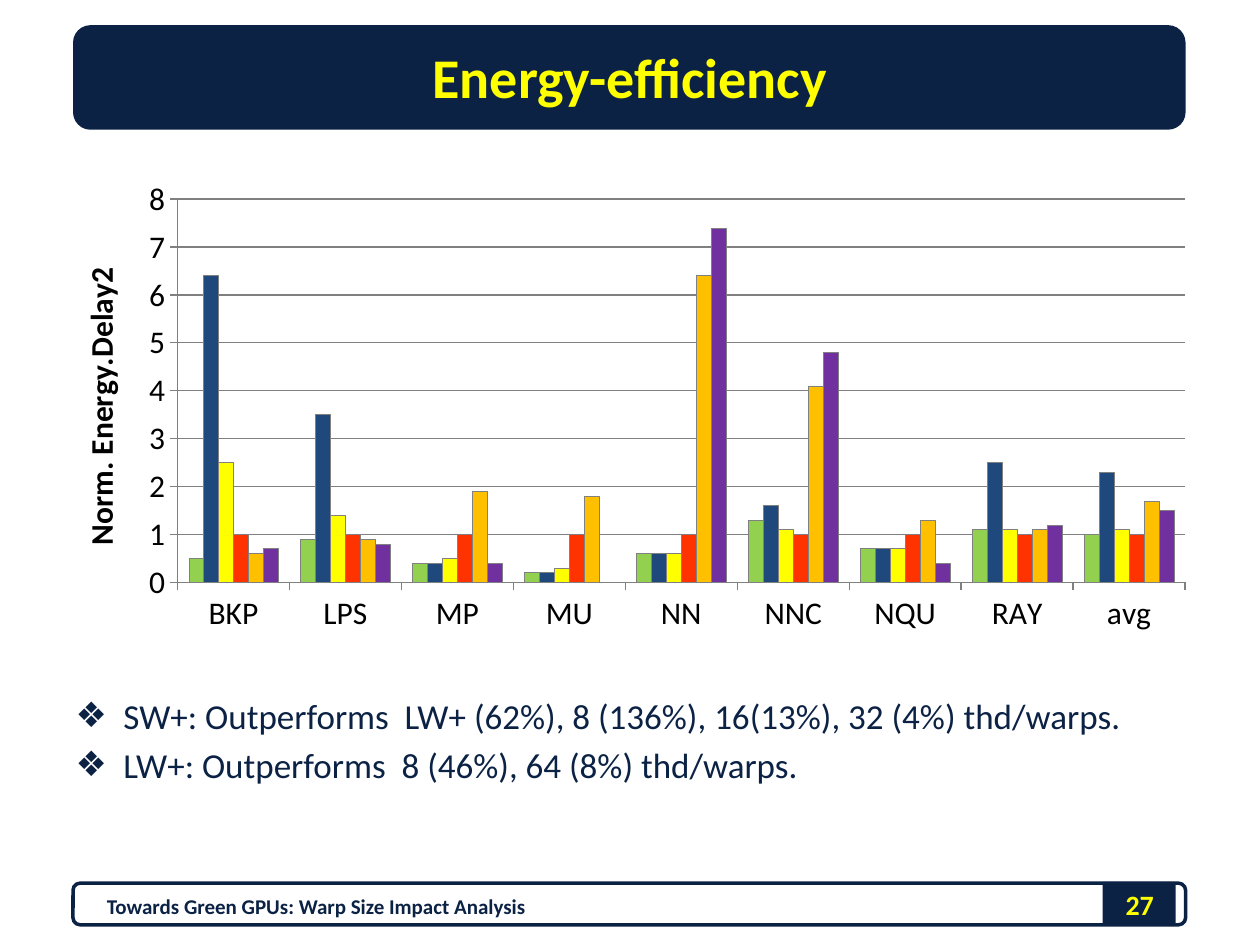
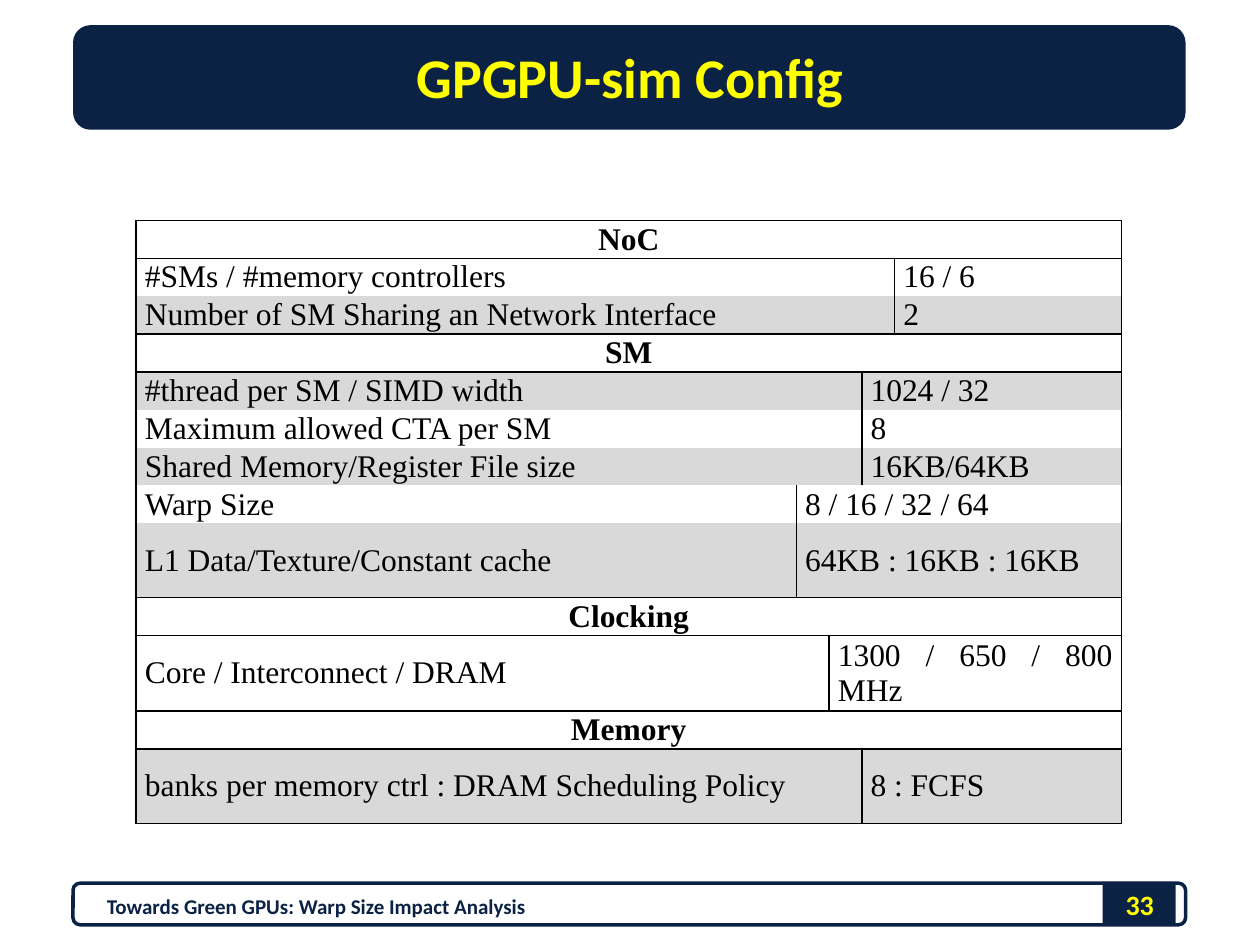
from typing import NamedTuple

from lxml.etree import SubElement
from pptx import Presentation
from pptx.chart.data import CategoryChartData
from pptx.dml.color import RGBColor
from pptx.enum.chart import XL_CHART_TYPE, XL_TICK_MARK
from pptx.enum.shapes import MSO_SHAPE
from pptx.enum.text import MSO_ANCHOR, MSO_AUTO_SIZE, PP_ALIGN
from pptx.oxml.ns import qn
from pptx.util import Inches, Pt

COLORS = {
    "navy": "0B2245", "yellow": "FFFF00", "black": "000000", "white": "FFFFFF",
    "shade": "D9D9D9", "grid": "808080", "green": "92D050", "blue": "1F497D",
    "red": "FF3300", "amber": "FFC000", "purple": "7030A0",
}
FOOTER = "Towards Green GPUs: Warp Size Impact Analysis"


class Band(NamedTuple):
    kind: MSO_SHAPE
    left: float
    top: float
    width: float
    height: float
    filled: bool


class WarpSeries(NamedTuple):
    name: str
    color: str
    values: tuple[float, ...]


class ConfigRow(NamedTuple):
    label: str
    value: str = ""
    label_span: int = 5
    shaded: bool = False
    height: float = 0.3

    @property
    def is_header(self) -> bool:
        return not self.value


BANDS = [
    Band(MSO_SHAPE.RECTANGLE, 8.75, 7, 0.58, 0.33, True),
    Band(MSO_SHAPE.ROUNDED_RECTANGLE, 0.58, 7.01, 8.83, 0.33, False),
    Band(MSO_SHAPE.ROUNDED_RECTANGLE, 0.58, 0.2, 8.83, 0.83, True),
]

BENCHMARKS = ("BKP", "LPS", "MP", "MU", "NN", "NNC", "NQU", "RAY", "avg")
WARP_SERIES = [
    WarpSeries("SW+", "green", (0.5, 0.9, 0.4, 0.2, 0.6, 1.3, 0.7, 1.1, 1)),
    WarpSeries("8", "blue", (6.4, 3.5, 0.4, 0.2, 0.6, 1.6, 0.7, 2.5, 2.3)),
    WarpSeries("16", "yellow", (2.5, 1.4, 0.5, 0.3, 0.6, 1.1, 0.7, 1.1, 1.1)),
    WarpSeries("32", "red", (1,) * 9),
    WarpSeries("64", "amber", (0.6, 0.9, 1.9, 1.8, 6.4, 4.1, 1.3, 1.1, 1.7)),
    WarpSeries("LW+", "purple", (0.7, 0.8, 0.4, 0, 7.4, 4.8, 0.4, 1.2, 1.5)),
]
FINDINGS = [
    "SW+: Outperforms  LW+ (62%), 8 (136%), 16(13%), 32 (4%) thd/warps.",
    "LW+: Outperforms  8 (46%), 64 (8%) thd/warps.",
]

CONFIG_COLUMNS = (5.24, 0.26, 0.26, 0.26, 1.8)
CONFIG_ROWS = [
    ConfigRow("NoC"),
    ConfigRow("#SMs / #memory controllers", "16 / 6", 4),
    ConfigRow("Number of SM Sharing an Network Interface", "2", 4, True),
    ConfigRow("SM"),
    ConfigRow("#thread per SM / SIMD width", "1024 / 32", 3, True),
    ConfigRow("Maximum allowed CTA per SM", "8", 3),
    ConfigRow("Shared Memory/Register File size", "16KB/64KB", 3, True),
    ConfigRow("Warp Size", "8 / 16 / 32 / 64", 1),
    ConfigRow("L1 Data/Texture/Constant cache", "64KB : 16KB : 16KB", 1, True, 0.59),
    ConfigRow("Clocking"),
    ConfigRow("Core / Interconnect / DRAM", "1300 / 650 / 800 MHz", 2, False, 0.59),
    ConfigRow("Memory"),
    ConfigRow("banks per memory ctrl : DRAM Scheduling Policy", "8 : FCFS", 3, True, 0.59),
]


def rgb(name: str) -> RGBColor:
    return RGBColor.from_string(COLORS[name])


def style_font(font, size: float, color: str, bold: bool = False, name: str = "Calibri") -> None:
    font.size, font.bold, font.name = Pt(size), bold, name
    font.color.rgb = rgb(color)


def place(shape, left: float, top: float, width: float, height: float) -> None:
    shape.left, shape.top = Inches(left), Inches(top)
    shape.width, shape.height = Inches(width), Inches(height)


# Shared page frame
def add_band(page, band: Band):
    shape = page.shapes.add_shape(band.kind, *map(Inches, band[1:5]))
    shape.shadow.inherit = False
    if band.filled:
        shape.fill.solid()
        shape.fill.fore_color.rgb = rgb("navy")
        shape.line.fill.background()
    else:
        shape.fill.background()
        shape.line.color.rgb = rgb("navy")
        shape.line.width = Pt(2)
    return shape


def add_label(page, text: str, left: float, top: float, width: float,
              size: float, color: str, align: PP_ALIGN) -> None:
    box = page.shapes.add_textbox(*map(Inches, (left, top, width, 0.4)))
    frame = box.text_frame
    frame.word_wrap = True
    frame.vertical_anchor = MSO_ANCHOR.MIDDLE
    frame.text = text
    para = frame.paragraphs[0]
    para.alignment = align
    style_font(para.font, size, color, True)


def add_page(deck, layout: int, title: str, number: str):
    page = deck.slides.add_slide(deck.slide_layouts[layout])
    heading = page.shapes.title
    for band in BANDS:
        heading._element.addprevious(add_band(page, band)._element)
    place(heading, 0.5, 0.17, 9, 0.87)
    frame = heading.text_frame
    frame.text = title
    frame.auto_size = MSO_AUTO_SIZE.NONE
    frame.vertical_anchor = MSO_ANCHOR.MIDDLE
    para = frame.paragraphs[0]
    para.alignment = PP_ALIGN.CENTER
    style_font(para.font, 32, "yellow", True)
    add_label(page, number, 8.67, 6.98, 0.75, 16, "yellow", PP_ALIGN.CENTER)
    add_label(page, FOOTER, 0.75, 6.99, 5.58, 12, "navy", PP_ALIGN.LEFT)
    return page


# Findings list
def fill_findings(body) -> None:
    place(body, 0.5, 5.46, 9, 1.24)
    frame = body.text_frame
    frame.auto_size = MSO_AUTO_SIZE.NONE
    frame.text = "\n".join(FINDINGS)
    for index, para in enumerate(frame.paragraphs):
        properties = para._p.get_or_add_pPr()
        properties.set("marL", str(Inches(0.38)))
        properties.set("indent", str(-Inches(0.38)))
        SubElement(properties, qn("a:buChar")).set("char", "❖")
        para.space_before = Pt(4 if index else 0)
        style_font(para.font, 20, "navy")


# Energy chart
def set_plot_layout(chart, left: float, top: float, width: float, height: float) -> None:
    plot_area = chart._chartSpace.chart.plotArea
    for old in plot_area.findall(qn("c:layout")):
        plot_area.remove(old)
    layout = SubElement(plot_area, qn("c:layout"))
    plot_area.insert(0, layout)
    manual = SubElement(layout, qn("c:manualLayout"))
    settings = {"layoutTarget": "inner", "xMode": "edge", "yMode": "edge",
                "x": left, "y": top, "w": width, "h": height}
    for tag, value in settings.items():
        SubElement(manual, qn(f"c:{tag}")).set("val", str(value))


def add_energy_chart(page) -> None:
    data = CategoryChartData()
    data.categories = BENCHMARKS
    for series in WARP_SERIES:
        data.add_series(series.name, series.values)
    area = map(Inches, (0.58, 1.33, 8.83, 3.91))
    chart = page.shapes.add_chart(XL_CHART_TYPE.COLUMN_CLUSTERED, *area, data).chart
    chart.has_legend = False
    chart.has_title = False
    style_font(chart.font, 18, "black")
    set_plot_layout(chart, 0.094, 0.064, 0.906, 0.778)

    plot = chart.plots[0]
    plot.gap_width, plot.overlap, plot.vary_by_categories = 150, 0, False
    for bars, series in zip(plot.series, WARP_SERIES):
        bars.format.fill.solid()
        bars.format.fill.fore_color.rgb = rgb(series.color)
        bars.format.line.color.rgb = rgb("grid")
        bars.format.line.width = Pt(0.25)

    value_axis = chart.value_axis
    value_axis.minimum_scale, value_axis.maximum_scale, value_axis.major_unit = 0, 8, 1
    value_axis.has_major_gridlines = True
    for line in (value_axis.format.line, chart.category_axis.format.line,
                 value_axis.major_gridlines.format.line):
        line.color.rgb = rgb("grid")
        line.width = Pt(0.75)
    for axis in (value_axis, chart.category_axis):
        axis.major_tick_mark = XL_TICK_MARK.OUTSIDE
    title = value_axis.axis_title.text_frame
    title.text = "Norm. Energy.Delay2"
    style_font(title.paragraphs[0].font, 18, "black", True)


# Configuration table
def set_borders(cell, top: bool, bottom: bool) -> None:
    properties = cell._tc.get_or_add_tcPr()
    for side, visible in (("L", True), ("R", True), ("T", top), ("B", bottom)):
        line = SubElement(properties, qn(f"a:ln{side}"), w=str(Pt(1)))
        if visible:
            fill = SubElement(line, qn("a:solidFill"))
            SubElement(fill, qn("a:srgbClr")).set("val", COLORS["black"])
        else:
            SubElement(line, qn("a:noFill"))


def fill_cell(cell, text: str, row: ConfigRow, top: bool, bottom: bool) -> None:
    set_borders(cell, top, bottom)
    cell.fill.solid()
    cell.fill.fore_color.rgb = rgb("shade" if row.shaded else "white")
    cell.margin_left = cell.margin_right = Inches(0.07)
    cell.margin_top = cell.margin_bottom = 0
    cell.vertical_anchor = MSO_ANCHOR.MIDDLE
    cell.text = text
    para = cell.text_frame.paragraphs[0]
    para.alignment = PP_ALIGN.CENTER if row.is_header else PP_ALIGN.JUSTIFY
    para.space_after = Pt(4)
    style_font(para.font, 18, "black", row.is_header, "Times New Roman")


def add_config_table(page) -> None:
    last = len(CONFIG_COLUMNS) - 1
    height = sum(row.height for row in CONFIG_ROWS)
    area = map(Inches, (1.08, 1.75, sum(CONFIG_COLUMNS), height))
    table = page.shapes.add_table(len(CONFIG_ROWS), last + 1, *area).table
    table.first_row = table.horz_banding = False
    for column, width in zip(table.columns, CONFIG_COLUMNS):
        column.width = Inches(width)
    for index, row in enumerate(CONFIG_ROWS):
        table.rows[index].height = Inches(row.height)
        # Rules run only around headers and the table's outer edge
        top = row.is_header or CONFIG_ROWS[index - 1].is_header
        bottom = row.is_header or index + 1 == len(CONFIG_ROWS) or CONFIG_ROWS[index + 1].is_header
        parts = [(0, row.label_span - 1, row.label)]
        if not row.is_header:
            parts.append((row.label_span, last, row.value))
        for start, end, text in parts:
            cell = table.cell(index, start)
            if end > start:
                cell.merge(table.cell(index, end))
            fill_cell(cell, text, row, top, bottom)


def main() -> None:
    deck = Presentation()
    deck.slide_width, deck.slide_height = Inches(10), Inches(7.5)

    energy_page = add_page(deck, 1, "Energy-efficiency", "27")
    fill_findings(energy_page.placeholders[1])
    add_energy_chart(energy_page)

    config_page = add_page(deck, 5, "GPGPU-sim Config", "33")
    add_config_table(config_page)

    deck.save("out.pptx")


if __name__ == "__main__":
    main()
